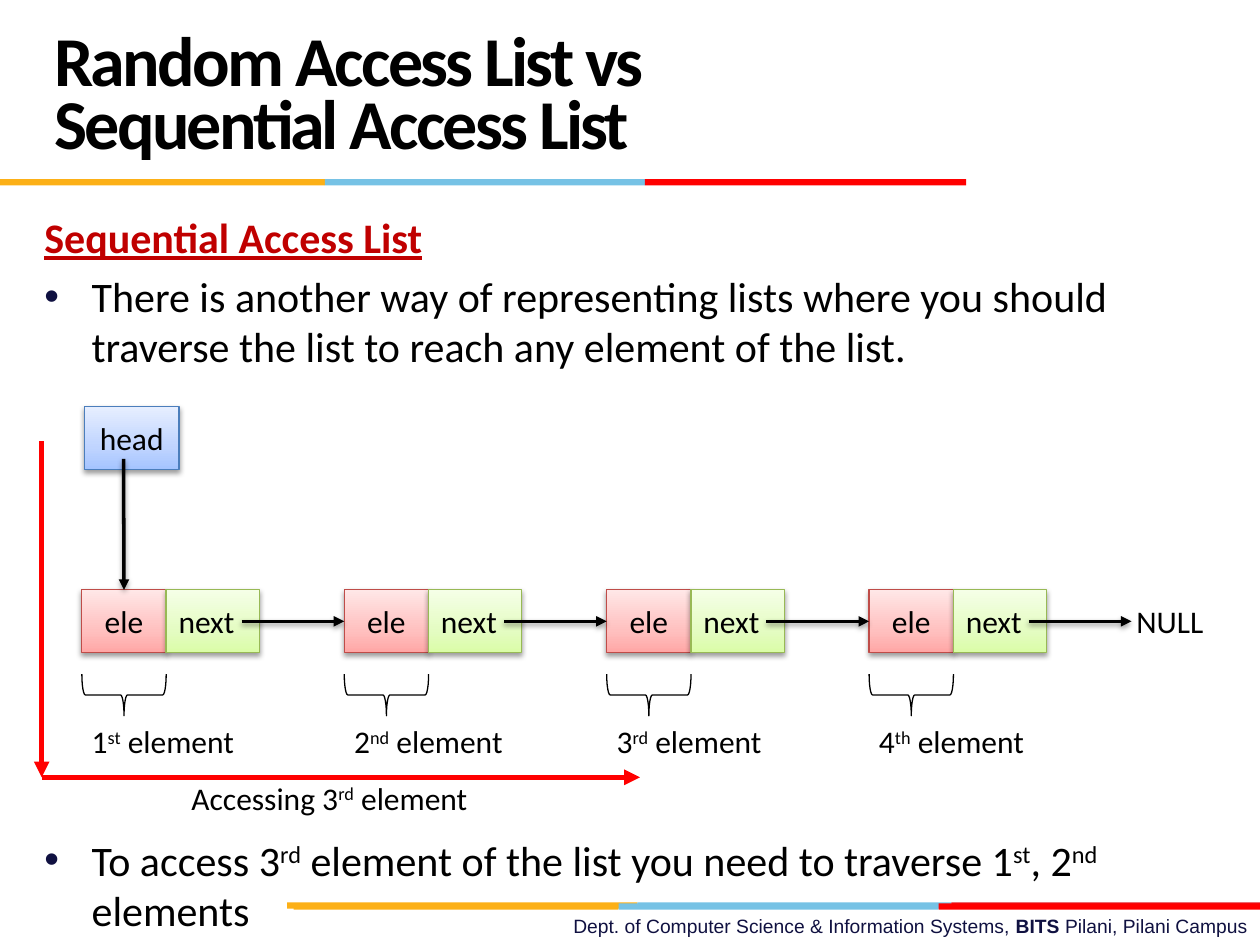
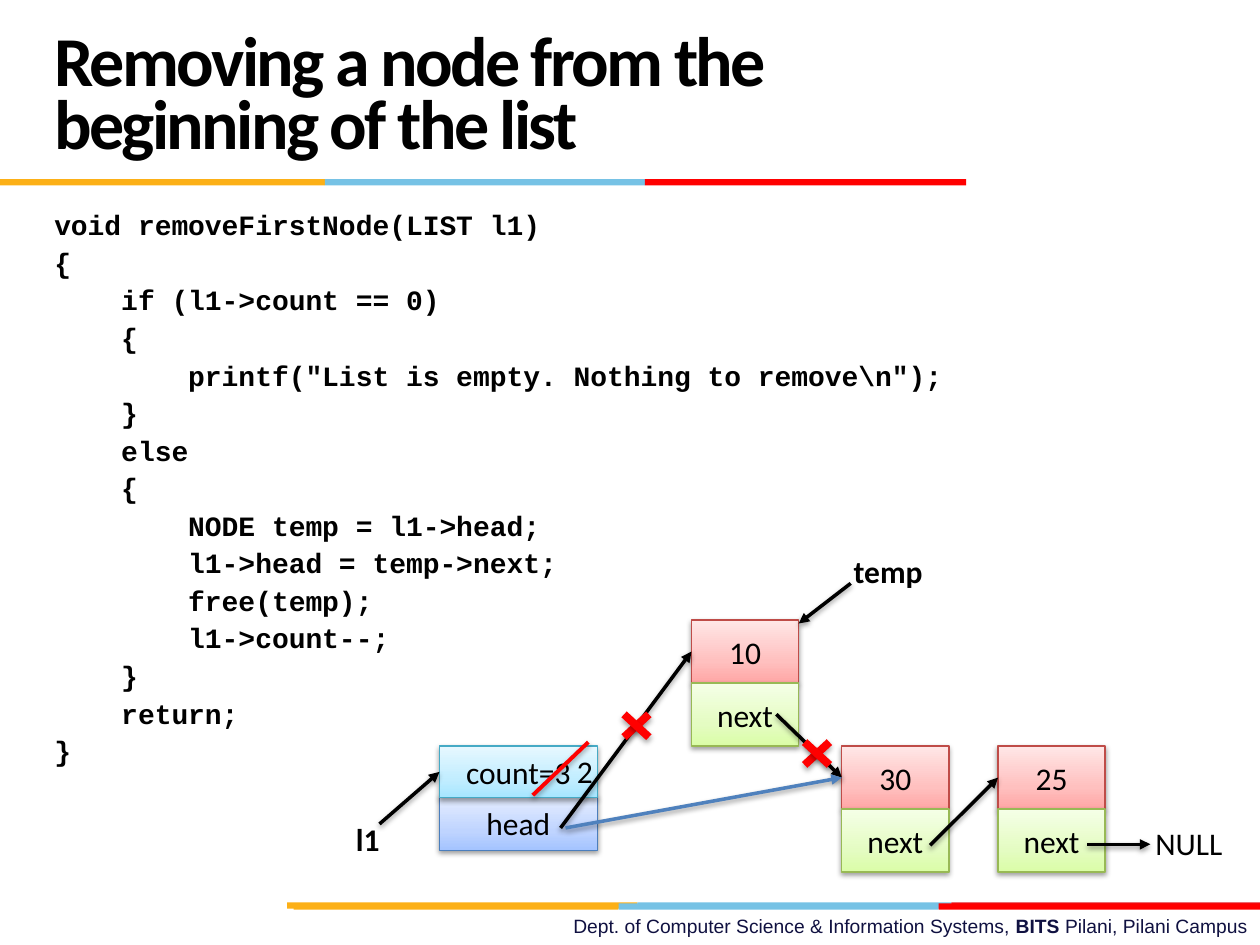
from dataclasses import dataclass
from typing import NamedTuple

from lxml import etree
from pptx import Presentation
from pptx import util as u
from pptx.dml.color import RGBColor
from pptx.enum import shapes, text
from pptx.oxml import parse_xml
from pptx.oxml.ns import nsdecls, qn

BLACK, RED, BLUE, NAVY = "000000", "FF0000", "4F81BD", "101141"
GOLD, SKY, CRIMSON, HEADING = "FCB017", "76C2E5", "E31C24", "C00000"
TEXT_H, CELL_H = 1.02, 1.27


# Shared styles; lengths are in centimetres
@dataclass(frozen=True)
class Paint:
    stops: tuple[str, str, str]
    border: str


@dataclass(frozen=True)
class Shadow:
    alpha: int
    dist: float


@dataclass(frozen=True)
class Strip:
    left: float
    top: float
    widths: tuple[float, float, float]
    end_color: str = RED


@dataclass(frozen=True)
class Node:
    value: str
    left: float
    top: float


class Point(NamedTuple):
    x: float
    y: float


class Site(NamedTuple):
    shape: object
    side: int


TOP, LEFT = 0, 1
INDIGO = Paint(("A4C4FF", "BFD4FF", "E6EEFF"), "4B7EBC")
PINK = Paint(("FFA6A5", "FFC0BF", "FFE7E7"), "BF4C48")
GREEN = Paint(("DAFDA7", "E4FCC2", "F5FFE7"), "98B955")
AQUA = Paint(("A7E6FF", "C1EDFF", "E7F8FF"), "46AAC5")
SOFT, DEEP = Shadow(38, 1.6), Shadow(35, 1.8)

STRIPS = (
    Strip(5.79, 18.19, (7.06, 6.33, 6.22), CRIMSON),
    Strip(5.92, 18.21, (6.55, 6.45, 6.48)),
    Strip(0, 3.61, (6.55, 6.45, 6.48)),
)


def rgb(color: str) -> RGBColor:
    return RGBColor.from_string(color)


def box(*lengths: float) -> list:
    return [u.Cm(n) for n in lengths]


# Text
def write(p, words: str, *, size=18, font="Calibri", color=BLACK, bold=False,
          underline=False, spacing=0) -> None:
    """Add runs to p; words between carets are raised."""
    for i, part in enumerate(words.split("^")):
        if not part:
            continue
        r = p.add_run()
        r.text = part
        f = r.font
        f.size, f.name, f.bold, f.underline = u.Pt(size), font, bold, underline
        f.color.rgb = rgb(color)
        rPr = r._r.get_or_add_rPr()
        if i % 2:
            rPr.set("baseline", "30000")
        if spacing:
            rPr.set("spc", str(spacing))


def next_paragraph(tf):
    first = tf.paragraphs[0]
    return tf.add_paragraph() if first.runs else first


def set_bullet(p, color: str = "") -> None:
    """Colour the inherited bullet, or remove it when no colour is given."""
    pPr = p._p.get_or_add_pPr()
    if color:
        clr = etree.SubElement(pPr, qn("a:buClr"))
        etree.SubElement(clr, qn("a:srgbClr")).set("val", color)
    else:
        etree.SubElement(pPr, qn("a:buNone"))


def label(s, words: str, left: float, top: float, width: float,
          align=text.PP_ALIGN.LEFT, **fmt):
    sp = s.shapes.add_textbox(*box(left, top, width, TEXT_H))
    sp.text_frame.word_wrap = True
    p = sp.text_frame.paragraphs[0]
    p.alignment = align
    write(p, words, **fmt)
    return sp


def place(sp, left: float, top: float, width: float, height: float):
    """Move a placeholder and return its text frame."""
    sp.left, sp.top, sp.width, sp.height = box(left, top, width, height)
    tf = sp.text_frame
    tf.auto_size = text.MSO_AUTO_SIZE.NONE
    return tf


# Shapes and lines
def add_shadow(sp, shadow: Shadow | None) -> None:
    """Set the effects; call after fill and line."""
    effects = etree.SubElement(sp._element.spPr, qn("a:effectLst"))
    if shadow:
        effects.append(parse_xml(
            f'<a:outerShdw {nsdecls("a")} blurRad="{u.Pt(3.1)}" dist="{u.Pt(shadow.dist)}" '
            f'dir="5400000" rotWithShape="0"><a:srgbClr val="{BLACK}">'
            f'<a:alpha val="{shadow.alpha * 1000}"/></a:srgbClr></a:outerShdw>'))


def cell(s, words: str, left: float, top: float, width: float, height: float,
         paint: Paint, align=text.PP_ALIGN.CENTER):
    sp = s.shapes.add_shape(shapes.MSO_SHAPE.RECTANGLE, *box(left, top, width, height))
    stops = "".join(f'<a:gs pos="{pos}"><a:srgbClr val="{c}"/></a:gs>'
                    for pos, c in zip((0, 35000, 100000), paint.stops))
    sp._element.spPr.append(parse_xml(
        f'<a:gradFill {nsdecls("a")} rotWithShape="1"><a:gsLst>{stops}</a:gsLst>'
        f'<a:lin ang="16200000" scaled="0"/></a:gradFill>'))
    sp.line.color.rgb = rgb(paint.border)
    sp.line.width = u.Pt(0.75)
    add_shadow(sp, SOFT)
    sp.text_frame.vertical_anchor = text.MSO_ANCHOR.MIDDLE
    p = sp.text_frame.paragraphs[0]
    p.alignment = align
    write(p, words)
    return sp


def line(s, start: Point, end: Point | Site, *, color=BLACK, width=2.0,
         arrow=True, shadow: Shadow | None = SOFT) -> None:
    target = end if isinstance(end, Point) else start
    c = s.shapes.add_connector(shapes.MSO_CONNECTOR.STRAIGHT, *box(*start, *target))
    if isinstance(end, Site):
        c.end_connect(end.shape, end.side)
    c.line.color.rgb = rgb(color)
    c.line.width = u.Pt(width)
    if arrow:
        ln = c._element.spPr.find(qn("a:ln"))
        etree.SubElement(ln, qn("a:tailEnd")).set("type", "triangle")
    add_shadow(c, shadow)


def brace(s, center: Point) -> None:
    width, height = 0.84, 1.7
    sp = s.shapes.add_shape(shapes.MSO_SHAPE.RIGHT_BRACE, *box(
        center.x - width / 2, center.y - height / 2, width, height))
    sp.rotation = 90
    sp.fill.background()
    sp.line.color.rgb = rgb(BLACK)
    sp.line.width = u.Pt(0.75)
    sp.shadow.inherit = False


def cross(s, center: Point) -> None:
    for dy in (0.23, -0.23):
        line(s, Point(center.x + 0.25, center.y - dy), Point(center.x - 0.25, center.y + dy),
             color=RED, width=4.5, arrow=False, shadow=DEEP)


# Bands and footer, kept on the layout
def dress_layout(layout, s) -> None:
    parts = []
    for strip in STRIPS:
        left = strip.left
        for width, color in zip(strip.widths, (GOLD, SKY, strip.end_color)):
            sp = s.shapes.add_shape(shapes.MSO_SHAPE.RECTANGLE,
                                    *box(left, strip.top, width, 0.13))
            sp.fill.solid()
            sp.fill.fore_color.rgb = rgb(color)
            sp.line.fill.background()
            sp.shadow.inherit = False
            parts.append(sp)
            left += width
    footer = dict(size=11, font="Arial", color=NAVY)
    sp = label(s, "Dept. of Computer Science & Information Systems, ", 0, 18.31, 25.4,
               text.PP_ALIGN.RIGHT, **footer)
    sp.height = u.Cm(0.74)
    p = sp.text_frame.paragraphs[0]
    write(p, "BITS ", bold=True, **footer)
    write(p, "Pilani, Pilani Campus", **footer)
    for sp in parts + [sp]:
        layout.shapes.element.append(sp.element)


def set_title(s, *rows: str) -> None:
    tf = place(s.shapes.title, 0.84, 0.43, 17.58, 3.18)
    tf.vertical_anchor = text.MSO_ANCHOR.MIDDLE
    for row in rows:
        p = next_paragraph(tf)
        p.alignment = text.PP_ALIGN.LEFT
        p.line_spacing = u.Pt(36)
        write(p, row, size=40, bold=True, spacing=-150)


# Slide 1
def sequential_access(s) -> None:
    set_title(s, "Random Access List vs", "Sequential Access List")
    tf = place(s.placeholders[1], 0.64, 4.14, 24.77, 14.68)
    p = next_paragraph(tf)
    p.space_before = u.Pt(0)
    set_bullet(p)
    write(p, "Sequential Access List", size=24, color=HEADING, bold=True, underline=True)
    for words, gap in (
        ("There is another way of representing lists where you should "
         "traverse the list to reach any element of the list.", 0.17),
        ("To access 3^rd^ element of the list you need to traverse 1^st^, 2^nd^ elements", 9.33),
    ):
        p = next_paragraph(tf)
        p.space_before = u.Cm(gap)
        set_bullet(p, NAVY)
        write(p, words, size=24)

    # Linked cells at an equal pitch
    top, pitch, ele_w, next_w = 11.89, 5.29, 1.7, 1.88
    middle = top + CELL_H / 2
    cell(s, "head", 1.7, 8.2, 1.91, CELL_H, INDIGO)
    pointer = Point(2.49, 9.25)
    for i, ordinal in enumerate(("1^st^", "2^nd^", "3^rd^", "4^th^")):
        left = 1.65 + i * pitch
        ele = cell(s, "ele", left, top, ele_w, CELL_H, PINK)
        cell(s, "next", left + ele_w, top, next_w, CELL_H, GREEN, text.PP_ALIGN.LEFT)
        line(s, pointer, Site(ele, LEFT if i else TOP))
        pointer = Point(left + 3.22, middle)
        brace(s, Point(left + ele_w / 2, 14.01))
        label(s, f"{ordinal} element", left - 0.05, 14.43, 3.61)
    line(s, pointer, Point(22.81, middle))
    label(s, "NULL", 22.66, 12.01, 1.96)

    # Path to the third element
    corner = Point(0.84, 15.67)
    for start, end in ((Point(0.84, 8.89), corner), (corner, Point(12.9, 15.67))):
        line(s, start, end, color=RED, width=3, shadow=None)
    label(s, "Accessing 3^rd^ element", 3.61, 15.57, 7.26)


# Slide 2
CODE = r"""void removeFirstNode(LIST l1)
{
    if (l1->count == 0)
    {
        printf("List is empty. Nothing to remove\n");
    }
    else
    {
        NODE temp = l1->head;
        l1->head = temp->next;
        free(temp);
        l1->count--;
    }
    return;
}"""


def remove_first(s) -> None:
    set_title(s, "Removing a node from the beginning of the list")
    tf = place(s.placeholders[1], 0.84, 4.14, 22.86, 11.53)
    for i, row in enumerate(CODE.splitlines()):
        p = next_paragraph(tf)
        p.line_spacing = 0.9
        p.space_before = u.Pt(4.2 if i else 0)
        set_bullet(p)
        write(p, row, size=16, font="Courier New", bold=True)

    # List header and nodes
    cell(s, "head", 8.86, 16.05, 3.18, 1.09, INDIGO)
    count = cell(s, "count=3", 8.86, 15.04, 3.18, 1.04, AQUA)
    values = {}
    for n in (Node("10", 13.94, 12.5), Node("30", 16.97, 15.04), Node("25", 20.12, 15.04)):
        values[n.value] = cell(s, n.value, n.left, n.top, 2.16, CELL_H, PINK)
        cell(s, "next", n.left, n.top + CELL_H, 2.16, CELL_H, GREEN)

    # Pointers
    for start, end in (
        (Point(21.92, 17.02), Point(23.19, 17.02)),
        (Point(11.3, 16.69), Site(values["10"], LEFT)),
        (Point(15.65, 14.4), Site(values["30"], LEFT)),
        (Point(7.65, 16.61), Site(count, LEFT)),
        (Point(18.75, 17.04), Site(values["25"], LEFT)),
        (Point(17.15, 11.76), Point(16.1, 12.57)),
    ):
        line(s, start, end)

    # Changes made by the removal
    cross(s, Point(12.83, 14.63))
    cross(s, Point(16.47, 15.19))
    line(s, Point(11.86, 14.96), Point(10.74, 16.03), color=RED, width=2.25,
         arrow=False, shadow=DEEP)
    line(s, Point(11.4, 16.69), Site(values["30"], LEFT), color=BLUE)
    label(s, "2", 11.13, 15.04, 1.32, text.PP_ALIGN.CENTER)
    label(s, "NULL", 23.04, 16.48, 1.96)
    label(s, "l1", 5.74, 16.41, 3.35, text.PP_ALIGN.CENTER, bold=True)
    label(s, "temp", 16.23, 11, 3.35, text.PP_ALIGN.CENTER, bold=True)


def main() -> None:
    prs = Presentation()
    prs.slide_width, prs.slide_height = box(25.4, 19.05)
    layout = prs.slide_layouts[1]
    first, second = (prs.slides.add_slide(layout) for _ in range(2))
    dress_layout(layout, first)
    sequential_access(first)
    remove_first(second)
    prs.save("out.pptx")


if __name__ == "__main__":
    main()
